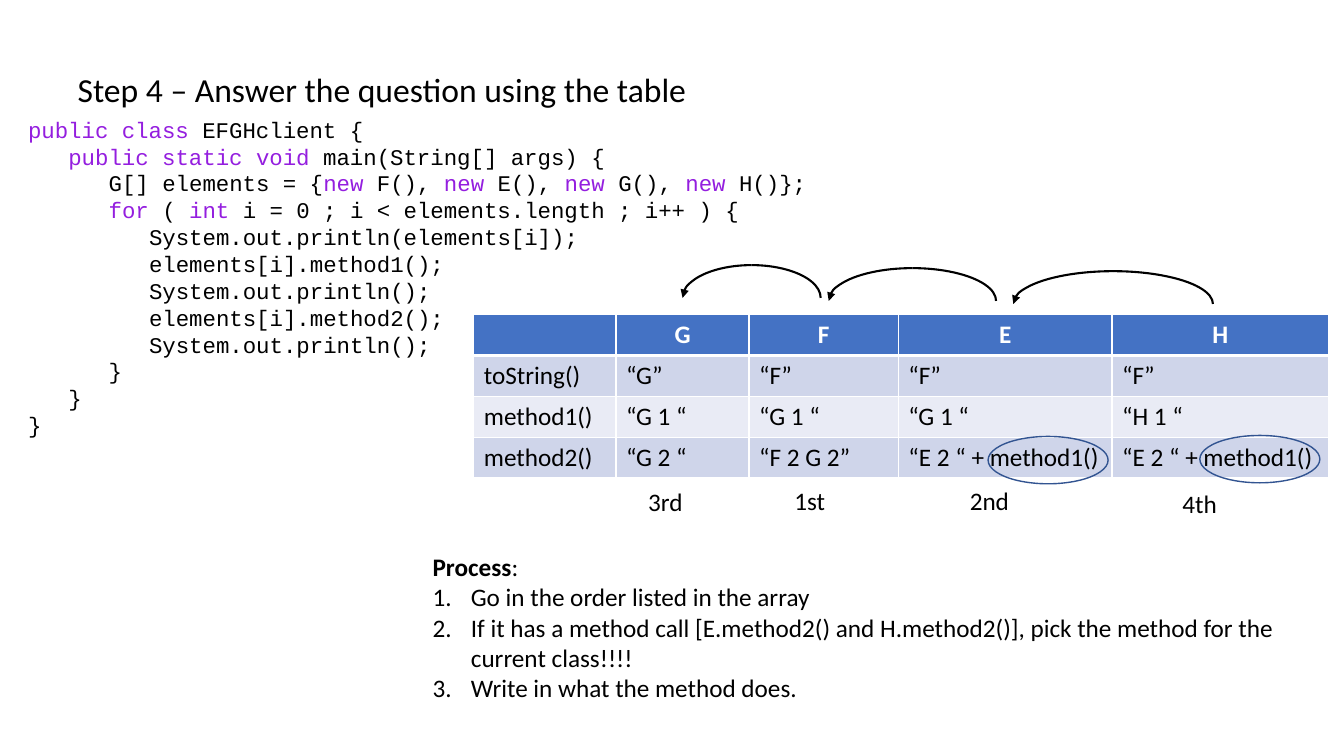
import pptx
import pptx.dml.color
import pptx.enum.shapes
import pptx.enum.text
import pptx.oxml
import pptx.oxml.ns
import pptx.util
from pptx.util import Inches, Pt

RGBColor = pptx.dml.color.RGBColor
BLACK = RGBColor(0x00, 0x00, 0x00)
WHITE = RGBColor(0xFF, 0xFF, 0xFF)
PURPLE = RGBColor(0x94, 0x1E, 0xDF)
HEADER = RGBColor(0x44, 0x72, 0xC4)
BAND_DARK = RGBColor(0xCF, 0xD5, 0xEA)
BAND_LIGHT = RGBColor(0xE9, 0xEB, 0xF5)
RING = RGBColor(0x32, 0x54, 0x91)

NS = pptx.oxml.ns.nsdecls("a")
SHAPES = pptx.enum.shapes.MSO_SHAPE
TEXT = pptx.enum.text

CODE = [
    (0, "|public class |EFGHclient {"),
    (1, "|public static void| main(String[] args) {"),
    (2, "G[] elements = {|new| F(), |new| E(), |new| G(), |new| H()};"),
    (2, "|for| ( |int |i = 0 ; i < elements.length ; i++ ) {"),
    (3, "System.out.println(elements[i]);"),
    (3, "elements[i].method1();"),
    (3, "System.out.println();"),
    (3, "elements[i].method2();"),
    (3, "System.out.println();"),
    (2, "}"),
    (1, "}"),
    (0, "}"),
]
OUTPUTS = [
    ["", "G", "F", "E", "H"],
    ["toString()", "“G”", "“F”", "“F”", "“F”"],
    ["method1()", "“G 1 “", "“G 1 “", "“G 1 “", "“H 1 “"],
    ["method2()", "“G 2 “", "“F 2 G 2”", "“E 2 “ + method1()", "“E 2 “ + method1()"],
]
COLUMNS = [1.41, 1.32, 1.48, 2.12, 2.15]
STEPS = [
    "Go in the order listed in the array",
    "If it has a method call [E.method2() and H.method2()], "
    "pick the method for the current class!!!!",
    "Write in what the method does.",
]
ARROWS = [(10.05, 2.69, 1.98), (8.22, 2.66, 1.66), (6.77, 2.63, 1.37)]
RINGS = [(9.8, 4.33), (11.9, 4.32)]
ORDER = [("1st", 7.78, 4.77), ("2nd", 9.52, 4.77), ("3rd", 6.33, 4.78), ("4th", 11.63, 4.8)]


def style(p, size, name="Calibri", color=BLACK, bold=None):
    """Set the font of a whole paragraph."""
    p.font.size, p.font.name, p.font.bold = Pt(size), name, bold
    p.font.color.rgb = color


def place(shape, x, y, w, h):
    """Move a placeholder into a box and return its plain text frame."""
    shape.left, shape.top, shape.width, shape.height = map(Inches, (x, y, w, h))
    tf = shape.text_frame
    tf.auto_size = TEXT.MSO_AUTO_SIZE.NONE
    tf.vertical_anchor = TEXT.MSO_ANCHOR.TOP
    return tf


def indent(p, left, hanging=0):
    """Indent a paragraph by inches."""
    pPr = p._p.get_or_add_pPr()
    pPr.set("marL", str(Inches(left)))
    pPr.set("indent", str(-Inches(hanging)))
    return pPr


def add_title(s, *box):
    """Fill the title placeholder."""
    tf = place(s.shapes.title, *box)
    p = tf.paragraphs[0]
    p.text = "Step 4 – Answer the question using the table"
    p.alignment = TEXT.PP_ALIGN.LEFT
    style(p, 24)


def add_code(s, x, y, w, h):
    """Write the program, with keywords between bars in purple."""
    tf = s.shapes.add_textbox(*map(Inches, (x, y, w, h))).text_frame
    tf.word_wrap = True
    for n, (level, line) in enumerate(CODE):
        p = tf.add_paragraph() if n else tf.paragraphs[0]
        indent(p, 0.4 * level)
        style(p, 16, "Courier New")
        for i, part in enumerate(line.split("|")):
            if part:
                r = p.add_run()
                r.text = part
                r.font.color.rgb = PURPLE if i % 2 else BLACK


def add_borders(cell, row):
    """Draw white cell borders, thick below the header."""
    tcPr = cell._tc.get_or_add_tcPr()
    widths = {"L": 1, "R": 1, "T": 3 if row == 1 else 1, "B": 3 if row == 0 else 1}
    for i, (side, width) in enumerate(widths.items()):
        tcPr.insert(i, pptx.oxml.parse_xml(
            f'<a:ln{side} {NS} w="{Pt(width)}"><a:solidFill>'
            f'<a:srgbClr val="{WHITE}"/></a:solidFill></a:ln{side}>'))


def add_outputs(s, x, y, w, h):
    """Add the table of what each class prints."""
    rows = len(OUTPUTS)
    table = s.shapes.add_table(rows, len(COLUMNS), *map(Inches, (x, y, w, h))).table
    for column, width in zip(table.columns, COLUMNS):
        column.width = Inches(width)
    for i, values in enumerate(OUTPUTS):
        table.rows[i].height = Inches(h / rows)
        for j, value in enumerate(values):
            cell = table.cell(i, j)
            cell.fill.solid()
            cell.fill.fore_color.rgb = (HEADER, BAND_DARK, BAND_LIGHT, BAND_DARK)[i]
            add_borders(cell, i)
            p = cell.text_frame.paragraphs[0]
            p.text = value
            style(p, 18, color=BLACK if i else WHITE, bold=i == 0)
            if i == 0:
                p.alignment = TEXT.PP_ALIGN.CENTER


def add_outline(shapes, kind, color, width, x, y, w, h):
    """Add an unfilled shape."""
    shape = shapes.add_shape(kind, *map(Inches, (x, y, w, h)))
    shape.shadow.inherit = False
    shape.fill.background()
    shape.line.color.rgb = color
    shape.line.width = Pt(width)
    return shape


def add_arrow(s, x, y, w, h):
    """Add a half-ellipse arrow pointing back to the parent class."""
    shapes = s.shapes.add_group_shape().shapes
    add_outline(shapes, SHAPES.ARC, BLACK, 1.5, x, y, w, h)
    left = add_outline(shapes, SHAPES.ARC, BLACK, 1.5, x, y, w, h)
    left._element.spPr.xfrm.set("flipH", "1")
    left.line._get_or_add_ln().append(
        pptx.oxml.parse_xml(f'<a:tailEnd {NS} type="triangle"/>'))


def add_process(s, *box):
    """Fill the body placeholder with the numbered steps."""
    tf = place(s.placeholders[1], *box)
    p = tf.paragraphs[0]
    for text, bold in (("Process", True), (":", False)):
        r = p.add_run()
        r.text, r.font.bold = text, bold
    indent(p, 0).append(pptx.oxml.parse_xml(f"<a:buNone {NS}/>"))
    for step in STEPS:
        p = tf.add_paragraph()
        p.text = step
        indent(p, 0.38, 0.38).append(
            pptx.oxml.parse_xml(f'<a:buAutoNum {NS} type="arabicPeriod"/>'))
    for p in tf.paragraphs:
        p.space_before = Pt(0)
        style(p, 18)


def add_label(s, text, x, y, w, h):
    """Add a place in the order under a column."""
    tf = s.shapes.add_textbox(*map(Inches, (x, y, w, h))).text_frame
    tf.word_wrap = True
    p = tf.paragraphs[0]
    p.text = text
    style(p, 18)


def main():
    """Build and save the slide."""
    prs = pptx.Presentation()
    prs.slide_width, prs.slide_height = Inches(13.33), Inches(7.5)
    s = prs.slides.add_slide(prs.slide_layouts[1])
    add_title(s, 0.67, 0.63, 8.78, 0.5)
    add_outputs(s, 4.7, 3.12, 8.48, 1.62)
    for x, y, w in ARROWS:
        add_arrow(s, x, y, w, 0.65)
    add_process(s, 4.19, 5.42, 9.27, 1.62)
    add_code(s, 0.18, 1.1, 8.33, 3.33)
    for x, y in RINGS:
        add_outline(s.shapes, SHAPES.OVAL, RING, 1, x, y, 1.19, 0.47)
    for text, x, y in ORDER:
        add_label(s, text, x, y, 0.64, 0.4)
    prs.save("out.pptx")


if __name__ == "__main__":
    main()
